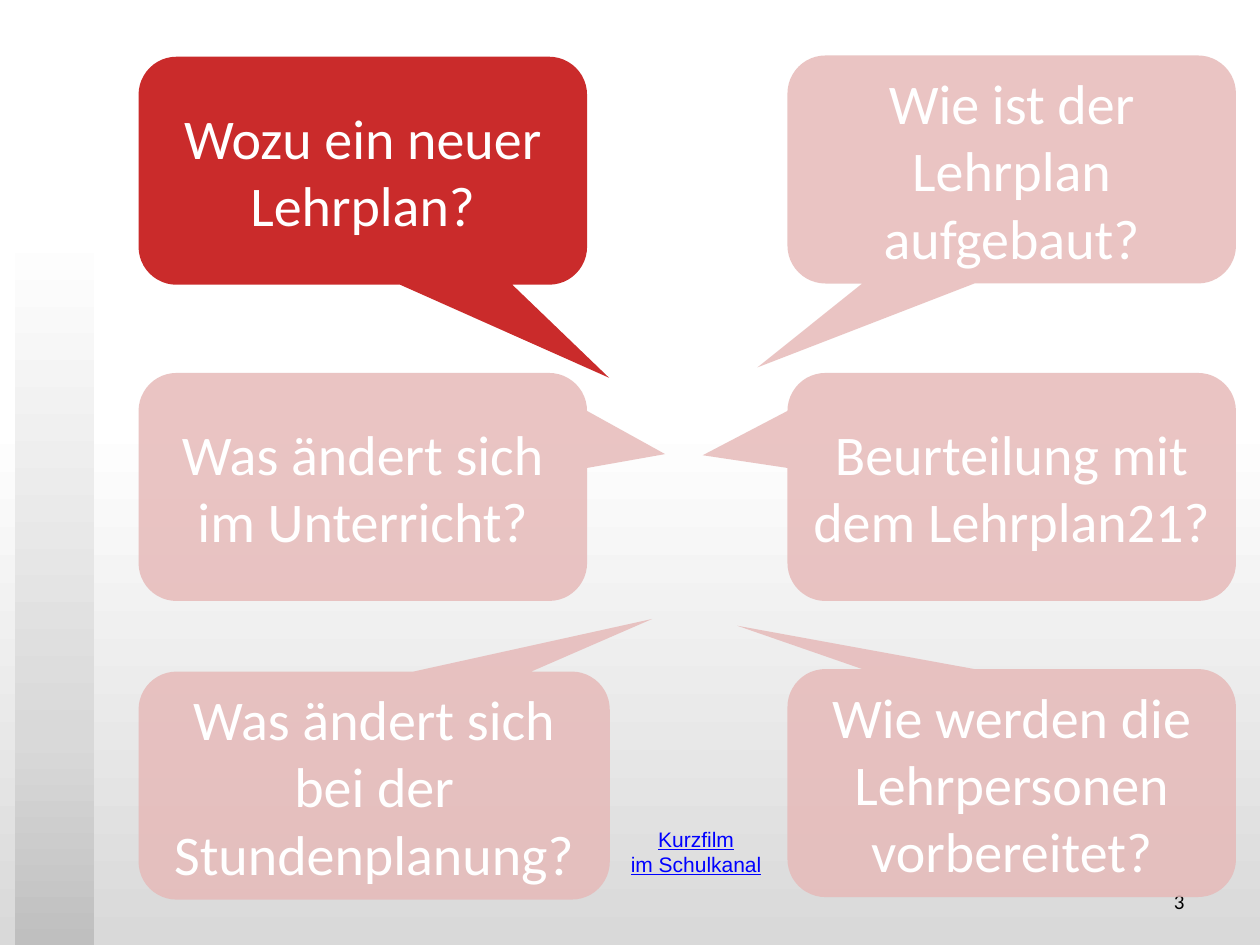
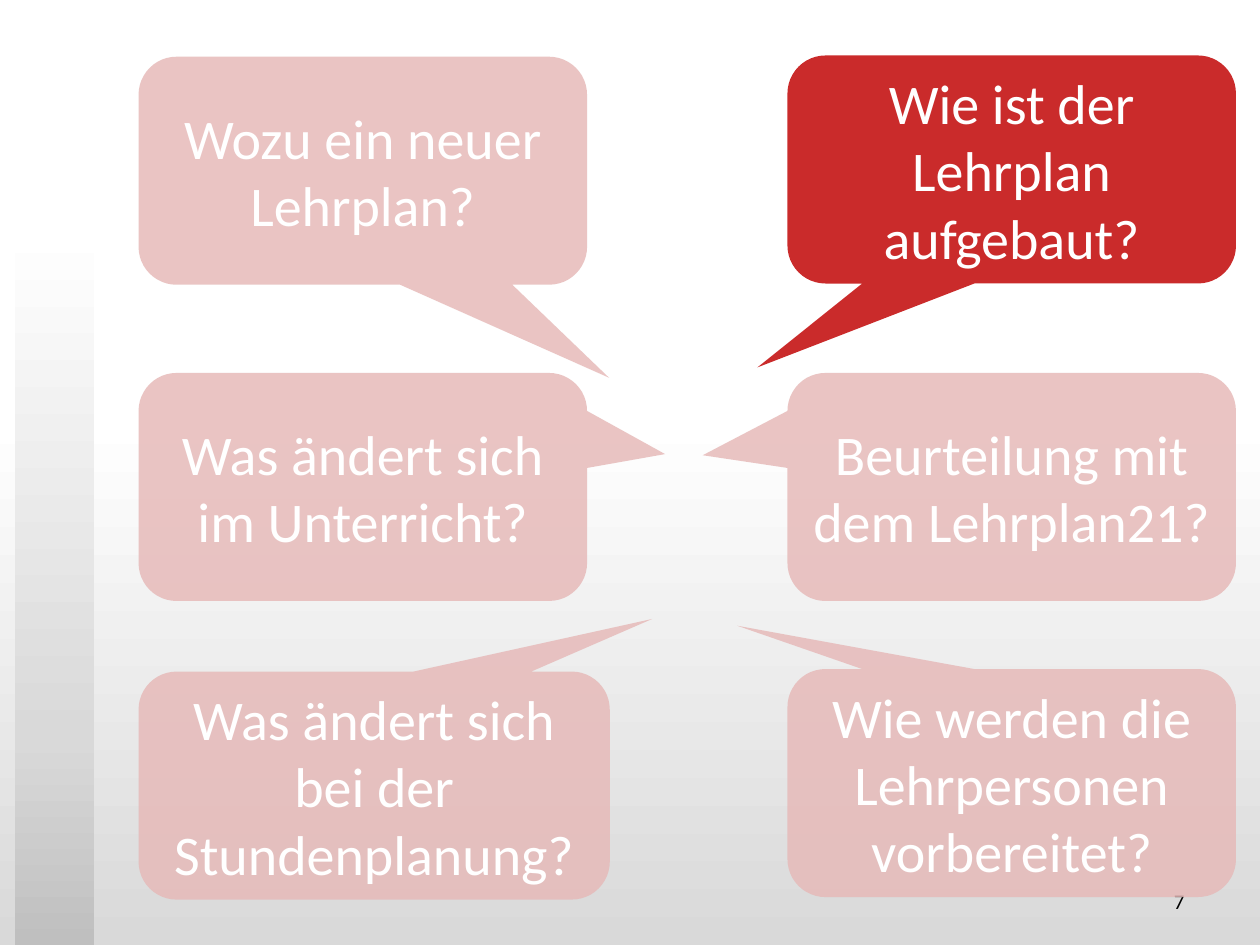
from dataclasses import dataclass

from lxml import etree
from pptx import Presentation
from pptx import util as u
from pptx.dml.color import RGBColor
from pptx.enum import shapes, text
from pptx.oxml.ns import qn

COLUMNS, ROWS = 100, 75  # grid cells across and down the slide
CELL = u.Inches(0.1)


@dataclass(frozen=True)
class Theme:
    active: str = "C00000"
    muted: str = "E6B9B8"
    opacity: int = 83
    background: tuple = ((0, "FFFFFF"), (44, "FFFFFF"), (100, "D9D9D9"))
    band: tuple = ((24, "FFFFFF"), (78, "D9D9D9"), (100, "BFBFBF"))
    question: tuple = ("Calibri", 32, "FFFFFF")
    number: tuple = ("Calibri", 12, "000000")
    link: tuple = ("Arial", 12, "0000FF")


THEME = Theme()

# Question, box on the grid, tail tip as shares of the box from its centre
QUESTIONS = [
    ("Wozu ein neuer Lehrplan?", (11, 4.5, 35.6, 18.1), (0.549, 0.908)),
    ("Wie ist der Lehrplan aufgebaut?", (62.5, 4.4, 35.6, 18.1), (-0.567, 0.868)),
    ("Was ändert sich im Unterricht?", (11, 29.6, 35.6, 18.1), (0.674, -0.144)),
    ("Wie werden die Lehrpersonen vorbereitet?", (62.5, 53.1, 35.6, 18.1), (-0.612, -0.69)),
    ("Was ändert sich bei der Stundenplanung?", (11, 53.3, 37.4, 18.1), (0.59, -0.731)),
    ("Beurteilung mit dem Lehrplan21?", (62.5, 29.6, 35.6, 18.1), (-0.689, -0.139)),
]


def on_grid(box):
    return [round(cells * CELL) for cells in box]


def set_gradient(fill, element, stops):
    """Fill from top to bottom with (percent, colour) stops."""
    fill.gradient()
    fill.gradient_angle = 270
    stop_list = next(element.iter(qn("a:gsLst")))
    for old_stop in list(stop_list):
        stop_list.remove(old_stop)
    for percent, color in stops:
        stop = etree.SubElement(stop_list, qn("a:gs"), pos=str(percent * 1000))
        etree.SubElement(stop, qn("a:srgbClr"), val=color)


def write(shape, lines, style, align, frame_format, **font_format):
    """Write one paragraph per line in a (font, size, colour) style."""
    name, size, color = style
    frame = shape.text_frame
    for key, value in frame_format.items():
        setattr(frame, key, value)
    frame.text = "\n".join(lines)
    for paragraph in frame.paragraphs:
        paragraph.alignment = align
        for key, value in {"name": name, "size": u.Pt(size), **font_format}.items():
            setattr(paragraph.font, key, value)
        paragraph.font.color.rgb = RGBColor.from_string(color)


def add_plain_shape(slide, kind, box):
    shape = slide.shapes.add_shape(kind, *on_grid(box))
    shape.shadow.inherit = False
    shape.line.fill.background()
    return shape


def add_band(slide, box):
    band = add_plain_shape(slide, shapes.MSO_SHAPE.RECTANGLE, box)
    set_gradient(band.fill, band.element, THEME.band)


def add_number(slide, box, number):
    label = slide.shapes.add_textbox(*on_grid(box))
    write(label, [str(number)], THEME.number, text.PP_ALIGN.RIGHT,
          {"word_wrap": True, "vertical_anchor": text.MSO_ANCHOR.MIDDLE})


def add_question(slide, box, question, tail, color):
    bubble = add_plain_shape(slide, shapes.MSO_SHAPE.ROUNDED_RECTANGULAR_CALLOUT, box)
    for index, value in enumerate((*tail, 0.16667)):
        bubble.adjustments[index] = value
    bubble.fill.solid()
    bubble.fill.fore_color.rgb = RGBColor.from_string(color)
    fill_color = bubble.element.spPr.find(qn("a:solidFill"))[0]
    etree.SubElement(fill_color, qn("a:alpha"), val=str(THEME.opacity * 1000))
    write(bubble, [question], THEME.question, text.PP_ALIGN.CENTER,
          {"word_wrap": True, "vertical_anchor": text.MSO_ANCHOR.MIDDLE})


def add_film_label(slide, box):
    label = slide.shapes.add_textbox(*on_grid(box))
    write(label, ["Kurzfilm", "im Schulkanal"], THEME.link, text.PP_ALIGN.CENTER,
          {"word_wrap": False, "auto_size": text.MSO_AUTO_SIZE.SHAPE_TO_FIT_TEXT},
          underline=True)


def add_overview_slide(presentation, number, active_question):
    """Show all questions, with the current one in the strong colour."""
    slide = presentation.slides.add_slide(presentation.slide_layouts[6])
    add_band(slide, (1.2, -0.1, 6.3, ROWS + 0.1))
    add_number(slide, (71.7, 69.5, 23.3, 4), number)
    for index, (question, box, tail) in enumerate(QUESTIONS):
        color = THEME.active if index == active_question else THEME.muted
        add_question(slide, box, question, tail, color)
    return slide


def main():
    presentation = Presentation()
    presentation.slide_width, presentation.slide_height = on_grid((COLUMNS, ROWS))
    master = presentation.slide_master
    set_gradient(master.background.fill, master.element, THEME.background)

    purpose_slide = add_overview_slide(presentation, 3, active_question=0)
    add_film_label(purpose_slide, (48.4, 65.1, 13.7, 5))
    add_overview_slide(presentation, 7, active_question=1)
    presentation.save("out.pptx")


if __name__ == "__main__":
    main()
